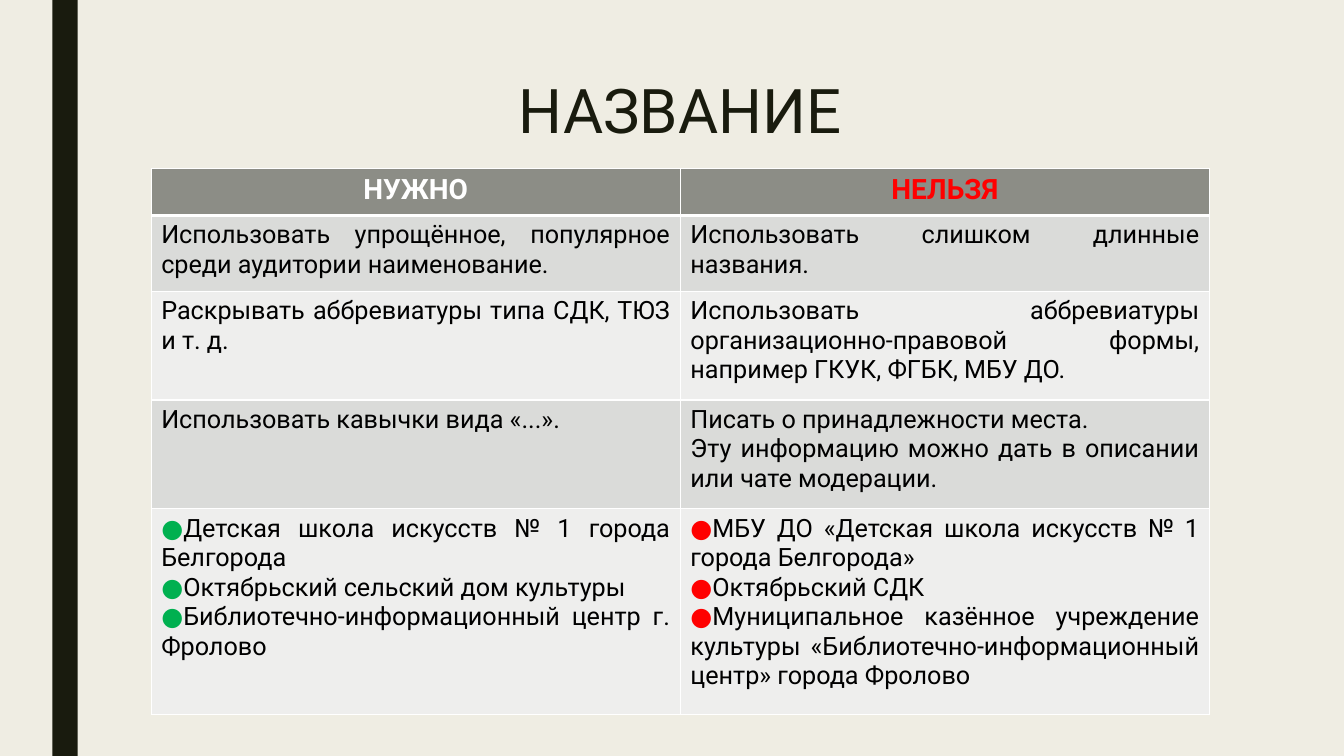
"""Builds the slide «НАЗВАНИЕ» with a table of naming rules."""
from dataclasses import dataclass

from lxml import etree
from pptx import Presentation, util as u
from pptx.dml.color import RGBColor
from pptx.enum import shapes, text
from pptx.oxml import ns

COLORS = {
    "paper": "EFEDE3", "ink": "191B0E", "header": "8C8D86", "dark": "DADBD9",
    "light": "EEEEED", "white": "FFFFFF", "black": "000000",
    "green": "00B050", "red": "FF0000",
}
FONT = "Roboto"
LEFT, WIDTH = 3.81, 26.67
ALIGN = text.PP_ALIGN


@dataclass
class Entry:
    lines: tuple[str, ...]
    dot: str = ""


@dataclass
class RuleRow:
    height: float
    fill: str
    entries: tuple[Entry, Entry]


HEADINGS = (("НУЖНО", "white"), ("НЕЛЬЗЯ", "red"))
HEADING_HEIGHT = 1.19
RULES = (
    RuleRow(1.91, "dark", (
        Entry(("Использовать упрощённое, популярное среди аудитории наименование.",)),
        Entry(("Использовать слишком длинные названия.",)),
    )),
    RuleRow(2.74, "light", (
        Entry(("Раскрывать аббревиатуры типа СДК, ТЮЗ и т. д.",)),
        Entry(("Использовать аббревиатуры организационно-правовой формы, "
               "например ГКУК, ФГБК, МБУ ДО.",)),
    )),
    RuleRow(2.74, "dark", (
        Entry(("Использовать кавычки вида «...».",)),
        Entry(("Писать о принадлежности места.",
               "Эту информацию можно дать в описании или чате модерации.")),
    )),
    RuleRow(5.18, "light", (
        Entry(("Детская школа искусств № 1 города Белгорода",
               "Октябрьский сельский дом культуры",
               "Библиотечно-информационный центр г. Фролово"), "green"),
        Entry(("МБУ ДО «Детская школа искусств № 1 города Белгорода»",
               "Октябрьский СДК",
               "Муниципальное казённое учреждение культуры "
               "«Библиотечно-информационный центр» города Фролово"), "red"),
    )),
)


def rgb(name: str) -> RGBColor:
    return RGBColor.from_string(COLORS[name])


def add_span(para, content: str, *, size: float = 18, color: str = "black",
             bold: bool = False, align=ALIGN.JUSTIFY) -> None:
    para.alignment = align
    span = para.add_run()
    span.text = content
    span.font.name = FONT
    span.font.size = u.Pt(size)
    span.font.bold = bold
    span.font.color.rgb = rgb(color)


def style_cell(cell, fill: str, top: float = 1, bottom: float = 1) -> None:
    properties = cell._tc.get_or_add_tcPr()
    for side, points in (("L", 1), ("R", 1), ("T", top), ("B", bottom)):
        line = etree.SubElement(properties, ns.qn(f"a:ln{side}"), w=str(u.Pt(points)))
        solid = etree.SubElement(line, ns.qn("a:solidFill"))
        etree.SubElement(solid, ns.qn("a:srgbClr"), val=COLORS["white"])
    cell.fill.solid()
    cell.fill.fore_color.rgb = rgb(fill)


def fill_entry(cell, entry: Entry) -> None:
    frame = cell.text_frame
    for index, content in enumerate(entry.lines):
        para = frame.add_paragraph() if index else frame.paragraphs[0]
        if entry.dot:
            add_span(para, "●", color=entry.dot)
        add_span(para, content)


def add_side_bar(page) -> None:
    bar = page.shapes.add_shape(shapes.MSO_SHAPE.RECTANGLE,
                                u.Cm(1.32), 0, u.Cm(0.64), u.Cm(19.05))
    bar.shadow.inherit = False
    bar.fill.solid()
    bar.fill.fore_color.rgb = rgb("ink")
    bar.line.fill.background()


def add_title(page) -> None:
    box = page.shapes.add_textbox(u.Cm(LEFT), u.Cm(1.91), u.Cm(WIDTH), u.Cm(4.11))
    frame = box.text_frame
    frame.word_wrap = True
    frame.vertical_anchor = text.MSO_ANCHOR.TOP
    para = frame.paragraphs[0]
    para.line_spacing = 0.89
    add_span(para, "НАЗВАНИЕ", size=44, color="ink", align=ALIGN.CENTER)


def add_rules_table(page) -> None:
    heights = [HEADING_HEIGHT, *(rule.height for rule in RULES)]
    table = page.shapes.add_table(len(heights), len(HEADINGS), u.Cm(LEFT), u.Cm(4.24),
                                  u.Cm(WIDTH), u.Cm(sum(heights))).table
    table.first_row = table.horz_banding = False
    for row, height in zip(table.rows, heights):
        row.height = u.Cm(height)
    for column, (heading, color) in enumerate(HEADINGS):
        cell = table.cell(0, column)
        style_cell(cell, "header", bottom=3)
        add_span(cell.text_frame.paragraphs[0], heading, size=20, color=color,
                 bold=True, align=ALIGN.CENTER)
    for number, rule in enumerate(RULES, start=1):
        for column, entry in enumerate(rule.entries):
            cell = table.cell(number, column)
            style_cell(cell, rule.fill, top=3 if number == 1 else 1)
            fill_entry(cell, entry)


def main() -> None:
    deck = Presentation()
    deck.slide_width, deck.slide_height = u.Cm(33.87), u.Cm(19.05)
    page = deck.slides.add_slide(deck.slide_layouts[6])
    page.background.fill.solid()
    page.background.fill.fore_color.rgb = rgb("paper")
    add_side_bar(page)
    add_title(page)
    add_rules_table(page)
    deck.save("out.pptx")


if __name__ == "__main__":
    main()
